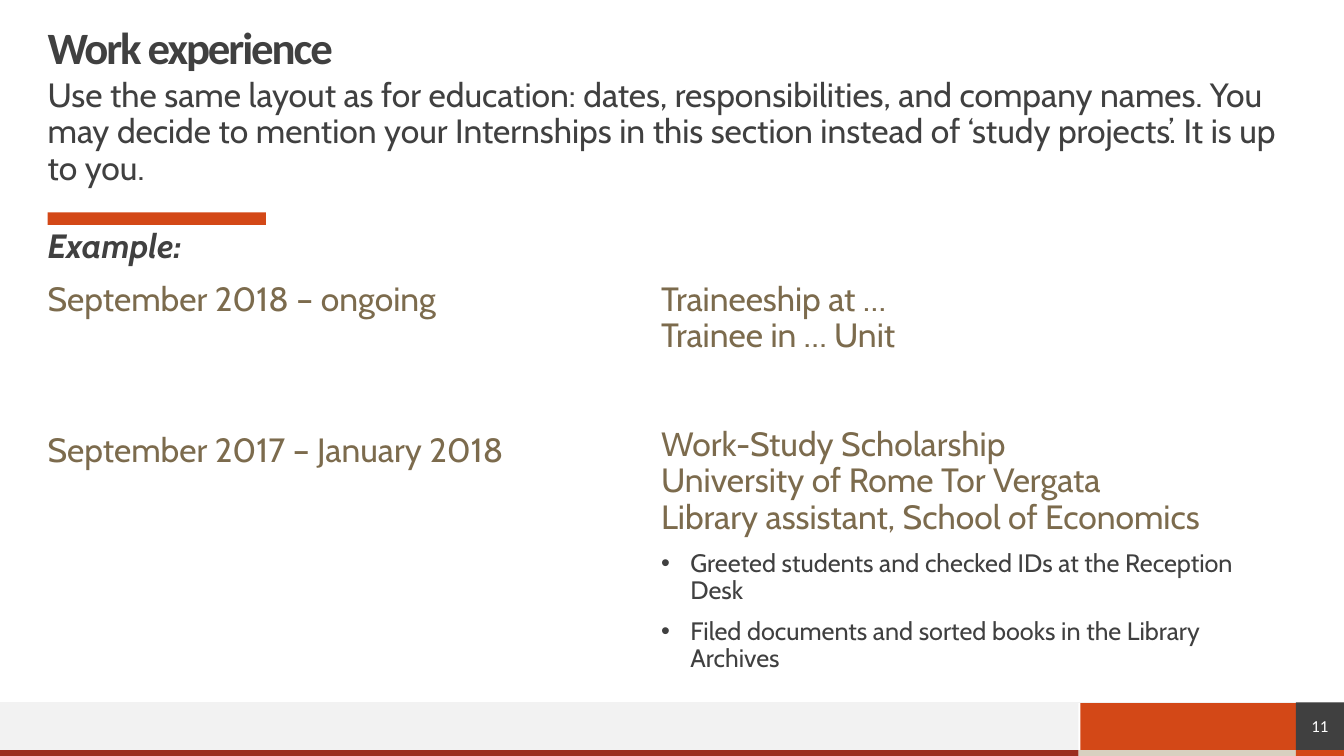
from dataclasses import dataclass

import pptx
import pptx.dml.color
import pptx.enum.shapes
import pptx.enum.text
import pptx.oxml
import pptx.oxml.ns
import pptx.util
from pptx.util import Cm

ORANGE, RED, SAND = "D34817", "9B2D1F", "D8D0C0"
DARK, BROWN, PALE, WHITE = "404040", "7C6B4D", "F2F2F2", "FFFFFF"
HEADING_FONT, BODY_FONT = "Calibri", "Cabin"

# Shared lines of the page, in centimetres
WIDTH, HEIGHT = 33.87, 19.05
MARGIN = 1.2
BAND_TOP, STRIP_TOP = 17.7, 18.9
BAND_RIGHT, NUMBER_LEFT = 27.18, 32.66
BAND_HEIGHT, STRIP_HEIGHT = STRIP_TOP - BAND_TOP, HEIGHT - STRIP_TOP

ALIGN = pptx.enum.text.PP_ALIGN
ANCHOR = pptx.enum.text.MSO_ANCHOR


@dataclass(frozen=True)
class Area:
    left: float
    top: float
    width: float
    height: float


@dataclass(frozen=True)
class Block:
    area: Area
    fill: str


@dataclass(frozen=True)
class Line:
    text: str
    before: float = 10
    size: float = 24
    color: str = BROWN
    bold: bool = False
    italic: bool = False
    bullet: bool = False


@dataclass(frozen=True)
class Body:
    index: int
    area: Area
    lines: tuple[Line, ...]


BLOCKS = (
    Block(Area(0, BAND_TOP, BAND_RIGHT, BAND_HEIGHT), PALE),
    Block(Area(BAND_RIGHT, STRIP_TOP, NUMBER_LEFT - BAND_RIGHT, STRIP_HEIGHT), SAND),
    Block(Area(0, STRIP_TOP, BAND_RIGHT, STRIP_HEIGHT), RED),
    Block(Area(NUMBER_LEFT, STRIP_TOP, WIDTH - NUMBER_LEFT, STRIP_HEIGHT), ORANGE),
    Block(Area(27.23, BAND_TOP, NUMBER_LEFT - 27.23, BAND_HEIGHT), ORANGE),
    Block(Area(MARGIN, 5.35, 5.5, 0.32), ORANGE),
)
NUMBER_BLOCK = Block(Area(NUMBER_LEFT, BAND_TOP, WIDTH - NUMBER_LEFT, BAND_HEIGHT), DARK)

BODIES = (
    Body(1, Area(MARGIN, 1.98, 31.5, 2.8), (
        Line("Use the same layout as for education: dates, responsibilities, and company "
             "names. You may decide to mention your Internships in this section instead of "
             "‘study projects’. It is up to you.", color=DARK),
    )),
    Body(3, Area(MARGIN, 5.79, 15.2, 1), (
        Line("Example:", color=DARK, bold=True, italic=True),
    )),
    Body(2, Area(MARGIN, 7.11, 15.45, 7.52), (
        Line("September 2018 – ongoing"),
        Line("September 2017 – January 2018", before=82),
    )),
    Body(4, Area(16.66, 7.11, 15.2, 9.32), (
        Line("Traineeship at …", before=0),
        Line("Trainee in … Unit", before=0),
        Line("Work-Study Scholarship", before=52),
        Line("University of Rome Tor Vergata", before=0),
        Line("Library assistant, School of Economics", before=0),
        Line("Greeted students and checked IDs at the Reception Desk",
             size=18, color=DARK, bullet=True),
        Line("Filed documents and sorted books in the Library Archives",
             size=18, color=DARK, bullet=True),
    )),
)


def rgb(value: str) -> pptx.dml.color.RGBColor:
    return pptx.dml.color.RGBColor.from_string(value)


def place(box, area: Area) -> None:
    box.left, box.top = Cm(area.left), Cm(area.top)
    box.width, box.height = Cm(area.width), Cm(area.height)


def prepare_frame(box, anchor: ANCHOR):
    frame = box.text_frame
    frame.word_wrap = True
    frame.auto_size = pptx.enum.text.MSO_AUTO_SIZE.NONE
    frame.vertical_anchor = anchor
    frame.margin_left = frame.margin_right = frame.margin_top = frame.margin_bottom = 0
    return frame


def write(para, text: str, *, size: float, color: str, font: str = BODY_FONT,
          bold: bool = False, italic: bool = False, align: ALIGN = ALIGN.LEFT,
          before: float = 0, leading: float = 0.9, tracking: float = 0) -> None:
    para.alignment, para.line_spacing = align, leading
    para.space_before, para.space_after = pptx.util.Pt(before), pptx.util.Pt(0)
    span = para.add_run()
    span.text = text
    span.font.name, span.font.size = font, pptx.util.Pt(size)
    span.font.bold, span.font.italic = bold, italic
    span.font.color.rgb = rgb(color)
    if tracking:
        span._r.get_or_add_rPr().set("spc", str(round(tracking * 100)))


def set_bullet(para, shown: bool) -> None:
    properties = para._p.get_or_add_pPr()
    indent = Cm(0.74) if shown else 0
    properties.set("marL", str(indent))
    properties.set("indent", str(-indent))
    if shown:
        font = pptx.oxml.parse_xml(
            f'<a:buFont {pptx.oxml.ns.nsdecls("a")} typeface="Arial"/>')
        properties.append(font)
    mark = 'buChar char="•"' if shown else "buNone"
    name, _, attribute = mark.partition(" ")
    properties.append(pptx.oxml.parse_xml(
        f'<a:{name} {pptx.oxml.ns.nsdecls("a")} {attribute}/>'))


def draw_block(page, block: Block):
    box = page.shapes.add_shape(pptx.enum.shapes.MSO_SHAPE.RECTANGLE, 0, 0, 0, 0)
    place(box, block.area)
    box.shadow.inherit = False
    box.fill.solid()
    box.fill.fore_color.rgb = rgb(block.fill)
    box.line.fill.background()
    return box


def draw_rule(page) -> None:
    rule = page.shapes.add_connector(pptx.enum.shapes.MSO_CONNECTOR.STRAIGHT,
                                     Cm(WIDTH), Cm(BAND_TOP), 0, Cm(BAND_TOP))
    rule.line.color.rgb = rgb(PALE)
    rule.line.width = pptx.util.Pt(0.5)
    rule._element.spPr.append(
        pptx.oxml.parse_xml(f'<a:effectLst {pptx.oxml.ns.nsdecls("a")}/>'))


def fill_body(page, body: Body) -> None:
    box = page.placeholders[body.index]
    place(box, body.area)
    frame = prepare_frame(box, ANCHOR.TOP)
    for number, line in enumerate(body.lines):
        para = frame.add_paragraph() if number else frame.paragraphs[0]
        write(para, line.text, size=line.size, color=line.color, bold=line.bold,
              italic=line.italic, before=line.before)
        set_bullet(para, line.bullet)


def main() -> None:
    deck = pptx.Presentation()
    deck.slide_width, deck.slide_height = Cm(WIDTH), Cm(HEIGHT)
    # The comparison layout offers a title and four bodies
    page = deck.slides.add_slide(deck.slide_layouts.get_by_name("Comparison"))

    # Title
    title = page.shapes.title
    place(title, Area(MARGIN, 0.66, 31.5, 1.2))
    write(prepare_frame(title, ANCHOR.MIDDLE).paragraphs[0], "Work experience",
          size=32, color=DARK, font=HEADING_FONT, bold=True, tracking=-1.5)

    # Introduction, example heading and the two columns
    for body in BODIES:
        fill_body(page, body)

    # Accent bar and footer
    for block in BLOCKS:
        draw_block(page, block)
    draw_rule(page)
    number = draw_block(page, NUMBER_BLOCK)
    write(prepare_frame(number, ANCHOR.MIDDLE).paragraphs[0], "11", size=12,
          color=WHITE, font=HEADING_FONT, align=ALIGN.CENTER, leading=1.0)

    deck.save("out.pptx")


if __name__ == "__main__":
    main()
